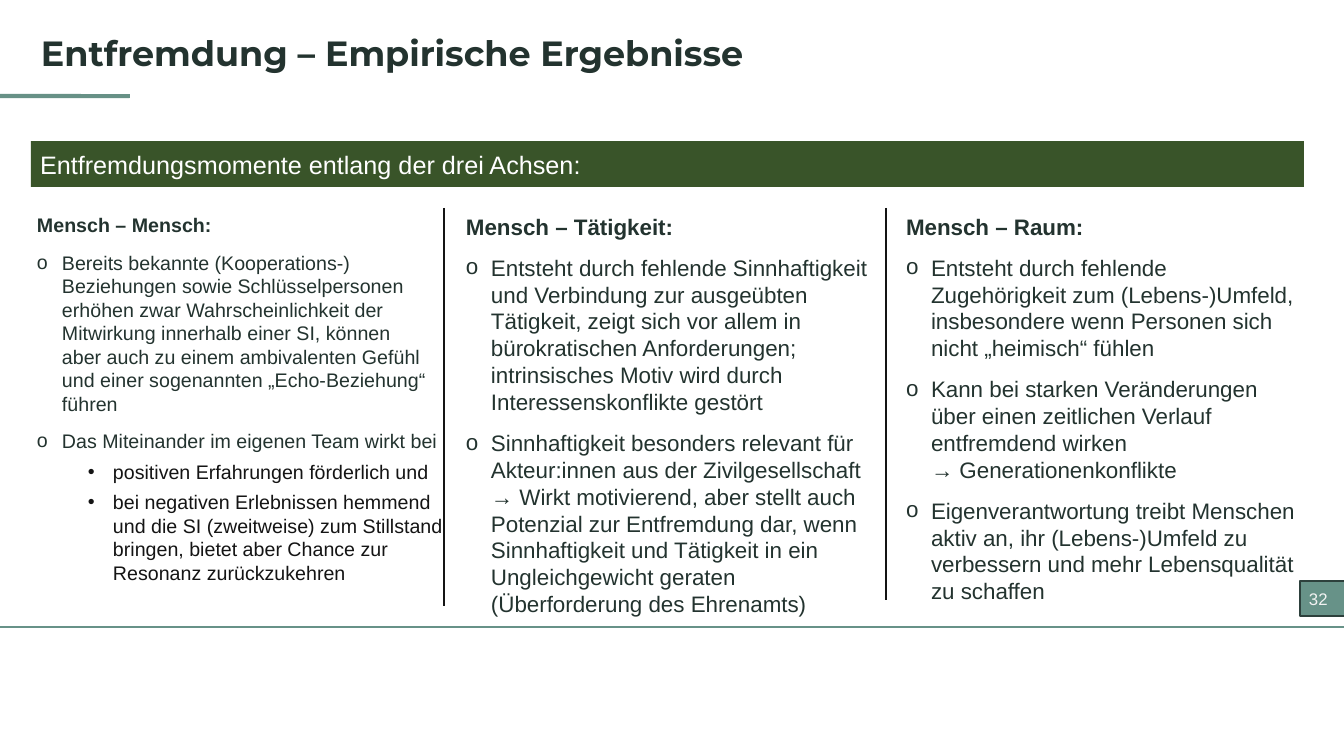
from copy import deepcopy

from lxml import etree
from pptx import Presentation
from pptx import util as u
from pptx.dml.color import RGBColor
from pptx.enum import shapes, text
from pptx.oxml.ns import qn

PX = 914400 / 100.8  # EMU per px
DARK, BLACK, GREEN, TEAL = "23332F", "141414", "395429", "679288"
COLUMN_TOP = 208

# Per level: indent in px, space before in pt, bullet sign, colour
LEVELS = {
    "heading": (0, 0, None, DARK),
    "point": (25, 10, "o", DARK),
    "subpoint": (76, 5, "•", BLACK),
}
HANGING = 25

# Column box in px, text size, paragraphs
COLUMNS = [
    ((27, COLUMN_TOP, 426, 444), 14, [
        ("heading", "Mensch – Mensch:"),
        ("point", "Bereits bekannte (Kooperations-) Beziehungen sowie Schlüsselpersonen "
                  "erhöhen zwar Wahrscheinlichkeit der Mitwirkung innerhalb einer SI, können \n"
                  "aber auch zu einem ambivalenten Gefühl und einer sogenannten "
                  "„Echo-Beziehung“ führen"),
        ("point", "Das Miteinander im eigenen Team wirkt bei"),
        ("subpoint", "positiven Erfahrungen förderlich und"),
        ("subpoint", "bei negativen Erlebnissen hemmend und die SI (zweitweise) zum "
                     "Stillstand bringen, bietet aber Chance zur Resonanz zurückzukehren"),
    ]),
    ((456, COLUMN_TOP, 435, 418), 16, [
        ("heading", "Mensch – Tätigkeit:"),
        ("point", "Entsteht durch fehlende Sinnhaftigkeit und Verbindung zur ausgeübten "
                  "Tätigkeit, zeigt sich vor allem in bürokratischen Anforderungen; "
                  "intrinsisches Motiv wird durch Interessenskonflikte gestört"),
        ("point", "Sinnhaftigkeit besonders relevant für Akteur:innen aus der "
                  "Zivilgesellschaft → Wirkt motivierend, aber stellt auch Potenzial zur "
                  "Entfremdung dar, wenn Sinnhaftigkeit und Tätigkeit in ein "
                  "Ungleichgewicht geraten (Überforderung des Ehrenamts)"),
    ]),
    ((896, COLUMN_TOP, 420, 418), 16, [
        ("heading", "Mensch – Raum:"),
        ("point", "Entsteht durch fehlende Zugehörigkeit zum (Lebens-)Umfeld, "
                  "insbesondere wenn Personen sich nicht „heimisch“ fühlen"),
        ("point", "Kann bei starken Veränderungen über einen zeitlichen Verlauf "
                  "entfremdend wirken \n→ Generationenkonflikte"),
        ("point", "Eigenverantwortung treibt Menschen aktiv an, ihr (Lebens-)Umfeld zu "
                  "verbessern und mehr Lebensqualität zu schaffen"),
    ]),
]


def emu(*lengths):
    return [u.Emu(round(length * PX)) for length in lengths]


def colour(hex_string):
    return RGBColor.from_string(hex_string)


def apply(target, values):
    for name, value in values.items():
        setattr(target, name, value)


def place(holder, box, anchor=text.MSO_ANCHOR.TOP):
    apply(holder, dict(zip(("left", "top", "width", "height"), emu(*box))))
    left, top = emu(10, 5)
    apply(holder.text_frame, {
        "word_wrap": True, "auto_size": text.MSO_AUTO_SIZE.NONE, "vertical_anchor": anchor,
        "margin_left": left, "margin_right": left, "margin_top": top, "margin_bottom": top})


def set_bullet(paragraph, sign, hex_string, indent):
    props = paragraph._p.get_or_add_pPr()
    left, hanging = emu(indent, HANGING if sign else 0)
    props.set("marL", str(left))
    props.set("indent", str(-hanging))
    if not sign:
        etree.SubElement(props, qn("a:buNone"))
        return
    bullet_colour = etree.SubElement(props, qn("a:buClr"))
    etree.SubElement(bullet_colour, qn("a:srgbClr"), val=hex_string)
    etree.SubElement(props, qn("a:buFont"), typeface="Arial")
    etree.SubElement(props, qn("a:buChar"), char=sign)


def write(paragraph, words, size, hex_string, bold=False, font="Arial", spacing=1.0, before=0):
    paragraph.text = words
    apply(paragraph, {"alignment": text.PP_ALIGN.LEFT, "line_spacing": spacing,
                      "space_before": u.Pt(before), "space_after": u.Pt(0)})
    for run in paragraph.runs:
        apply(run.font, {"size": u.Pt(size), "name": font, "bold": bold})
        run.font.color.rgb = colour(hex_string)
    # Line breaks take the size of the text around them
    for line_break in paragraph._p.findall(qn("a:br")):
        line_break.append(deepcopy(paragraph.runs[0]._r.rPr))


def add_block(slide, kind, box, fill, outline=None):
    block = slide.shapes.add_shape(kind, *emu(*box))
    block.shadow.inherit = False
    block.fill.solid()
    block.fill.fore_color.rgb = colour(fill)
    if outline:
        block.line.color.rgb = colour(outline)
        block.line.width = u.Pt(1)
    else:
        block.line.fill.background()


def add_rule(slide, start, end, hex_string, width):
    rule = slide.shapes.add_connector(shapes.MSO_CONNECTOR.STRAIGHT, *emu(*start, *end))
    rule.line.color.rgb = colour(hex_string)
    rule.line.width = u.Pt(width)
    etree.SubElement(rule._element.spPr, qn("a:effectLst"))


def add_page_number(slide, box, number):
    left, top, width, height = box
    add_block(slide, shapes.MSO_SHAPE.RECTANGLE, box, TEAL, "2D403C")
    label = slide.shapes.add_textbox(0, 0, 0, 0)
    place(label, (left - 1, top + 3, width + 12, height - 5))
    write(label.text_frame.paragraphs[0], number, 12, "F2F2F2")


def fill_title(slide, holder, box):
    left, top, width, height = box
    add_block(slide, shapes.MSO_SHAPE.ROUNDED_RECTANGLE, (-10, top + 63, 140, 4), "679186")
    place(holder, box)
    write(holder.text_frame.paragraphs[0], "Entfremdung – Empirische Ergebnisse",
          25, DARK, True, "Montserrat", 0.9)


def fill_banner(slide, holder, box):
    left, top, width, height = box
    add_block(slide, shapes.MSO_SHAPE.RECTANGLE, box, GREEN)
    # Text goes above the bar
    slide.shapes._spTree.append(holder._element)
    place(holder, (left - 1, top + 7, width + 1, height - 10), text.MSO_ANCHOR.MIDDLE)
    banner = holder.text_frame.paragraphs[0]
    set_bullet(banner, None, None, 0)
    write(banner, "Entfremdungsmomente entlang der drei Achsen:", 18, "FFFFFF", spacing=0.9)


def fill_column(holder, box, size, entries):
    place(holder, box)
    frame = holder.text_frame
    for number, (level, words) in enumerate(entries):
        paragraph = frame.add_paragraph() if number else frame.paragraphs[0]
        indent, before, sign, hex_string = LEVELS[level]
        paragraph.level = 1 if level == "subpoint" else 0
        set_bullet(paragraph, sign, hex_string, indent)
        write(paragraph, words, size, hex_string, level == "heading", before=before)


def main():
    deck = Presentation()
    deck.slide_width, deck.slide_height = emu(1344, 756)
    slide = deck.slides.add_slide(deck.slide_layouts.get_by_name("Comparison"))
    title, banner, *columns = slide.placeholders

    # Footer line and page number
    add_rule(slide, (-8, 627), (1355, 627), TEAL, 0.75)
    add_page_number(slide, (1300, 581, 52, 35), "32")

    # Title and banner
    fill_title(slide, title, (31, 31, 855, 52))
    fill_banner(slide, banner, (31, 141, 1273, 46))

    # Three columns with dividers
    for holder, (box, size, entries) in zip(columns, COLUMNS):
        fill_column(holder, box, size, entries)
    for x, bottom in ((444, 606), (886, 600)):
        add_rule(slide, (x, COLUMN_TOP), (x, bottom), BLACK, 1.5)

    deck.save("out.pptx")


if __name__ == "__main__":
    main()
